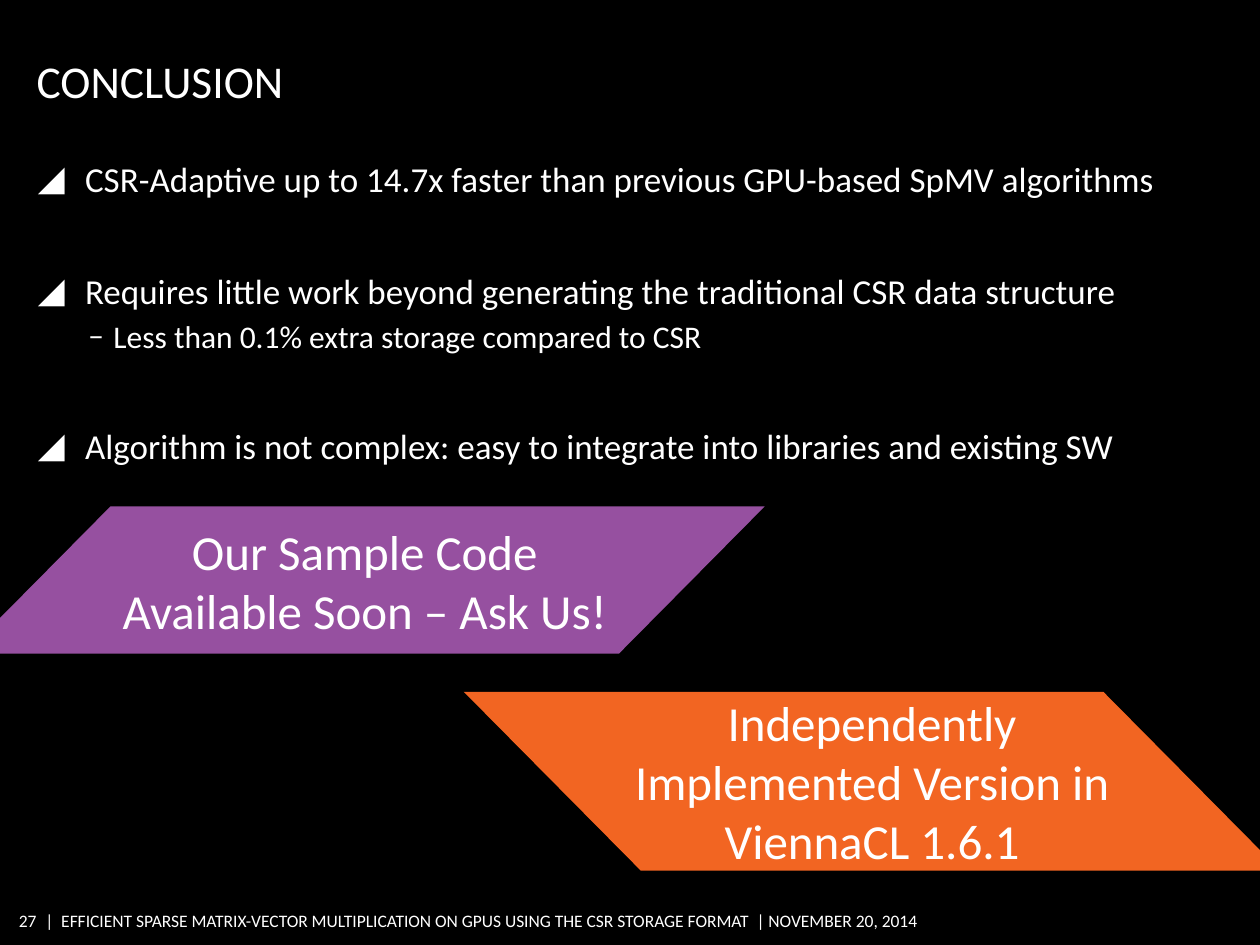
from lxml import etree
from pptx import Presentation
from pptx.dml.color import RGBColor
from pptx.enum.shapes import MSO_SHAPE
from pptx.enum.text import MSO_ANCHOR, MSO_AUTO_SIZE, PP_ALIGN
from pptx.oxml.ns import qn
from pptx.util import Pt

PARALLELOGRAM = MSO_SHAPE.PARALLELOGRAM
LEFT, CENTER, RIGHT = PP_ALIGN.LEFT, PP_ALIGN.CENTER, PP_ALIGN.RIGHT
TOP, MIDDLE, BOTTOM = MSO_ANCHOR.TOP, MSO_ANCHOR.MIDDLE, MSO_ANCHOR.BOTTOM
NO_AUTOFIT = MSO_AUTO_SIZE.NONE
COLORS = {"background": "000000", "text": "FFFFFF", "purple": "9650A0", "orange": "F26522"}


def format_frame(frame, anchor, margins, wrap=True):
    frame.auto_size = NO_AUTOFIT
    frame.word_wrap = wrap
    frame.vertical_anchor = anchor
    frame.margin_left = frame.margin_right = Pt(margins[0])
    frame.margin_top, frame.margin_bottom = Pt(margins[1]), Pt(margins[2])


def format_paragraph(paragraph, size, alignment=LEFT):
    paragraph.alignment = alignment
    paragraph.font.name = "Calibri"
    paragraph.font.size = Pt(size)
    paragraph.font.color.rgb = RGBColor.from_string(COLORS["text"])


presentation = Presentation()
presentation.slide_width, presentation.slide_height = Pt(720), Pt(540)
slide = presentation.slides.add_slide(presentation.slide_layouts[1])
slide.background.fill.solid()
slide.background.fill.fore_color.rgb = RGBColor.from_string(COLORS["background"])

title = slide.shapes.title
title.left, title.top, title.width, title.height = Pt(20.9), Pt(24), Pt(590.4), Pt(37.4)
title.text_frame.text = "CONCLUSION"
format_frame(title.text_frame, BOTTOM, (0, 3.6, 0))
format_paragraph(title.text_frame.paragraphs[0], 26)

body = slide.placeholders[1]
body.left, body.top, body.width, body.height = Pt(21.6), Pt(86.4), Pt(676.8), Pt(411.1)
format_frame(body.text_frame, TOP, (0, 3.6, 3.6))
points = [
    (0, 0, "CSR-Adaptive up to 14.7x faster than previous GPU-based SpMV algorithms"),
    (0, 40, "Requires little work beyond generating the traditional CSR data structure"),
    (1, 3, "Less than 0.1% extra storage compared to CSR"),
    (0, 40, "Algorithm is not complex: easy to integrate into libraries and existing SW"),
]
level_styles = [("◢", 27, -27, 20), ("‒", 43.2, -14.4, 18)]
body.text_frame.text = "\n".join(text for _, _, text in points)
for paragraph, (level, space_before, _) in zip(body.text_frame.paragraphs, points):
    bullet, margin, indent, size = level_styles[level]
    paragraph.level = level
    properties = paragraph._p.get_or_add_pPr()
    properties.set("marL", str(Pt(margin)))
    properties.set("indent", str(Pt(indent)))
    bullet_color = etree.SubElement(properties, qn("a:buClr"))
    etree.SubElement(bullet_color, qn("a:srgbClr"), val=COLORS["text"])
    etree.SubElement(properties, qn("a:buFont"), typeface="Calibri")
    etree.SubElement(properties, qn("a:buChar"), char=bullet)
    paragraph.space_before = Pt(space_before)
    format_paragraph(paragraph, size)

banners = [
    (-20.2, 289.4, 457.2, 84.2, "purple", False, "Our Sample Code Available Soon – Ask Us!"),
    (265, 395.3, 466.6, 102.2, "orange", True, "Independently Implemented Version in ViennaCL 1.6.1"),
]
for left, top, width, height, color, flipped, text in banners:
    banner = slide.shapes.add_shape(PARALLELOGRAM, Pt(left), Pt(top), Pt(width), Pt(height))
    banner.adjustments[0] = 0.99
    banner.shadow.inherit = False
    banner.fill.solid()
    banner.fill.fore_color.rgb = RGBColor.from_string(COLORS[color])
    banner.line.fill.background()
    if flipped:
        banner._element.spPr.xfrm.set("flipH", "1")
    banner.text_frame.text = text
    format_frame(banner.text_frame, MIDDLE, (7.2, 3.6, 3.6))
    format_paragraph(banner.text_frame.paragraphs[0], 28, CENTER)

footers = [
    (9.4, 11.5, RIGHT, "27"),
    (25.9, 509.8, LEFT, "|  EFFICIENT SPARSE MATRIX-VECTOR MULTIPLICATION ON GPUS USING THE CSR STORAGE FORMAT  | NOVEMBER 20, 2014"),
]
for left, width, alignment, text in footers:
    footer = slide.shapes.add_textbox(Pt(left), Pt(516.6), Pt(width), Pt(18.7))
    footer.text_frame.text = text
    format_frame(footer.text_frame, MIDDLE, (0, 2.9, 2.9), wrap=False)
    format_paragraph(footer.text_frame.paragraphs[0], 10, alignment)

presentation.save("out.pptx")
